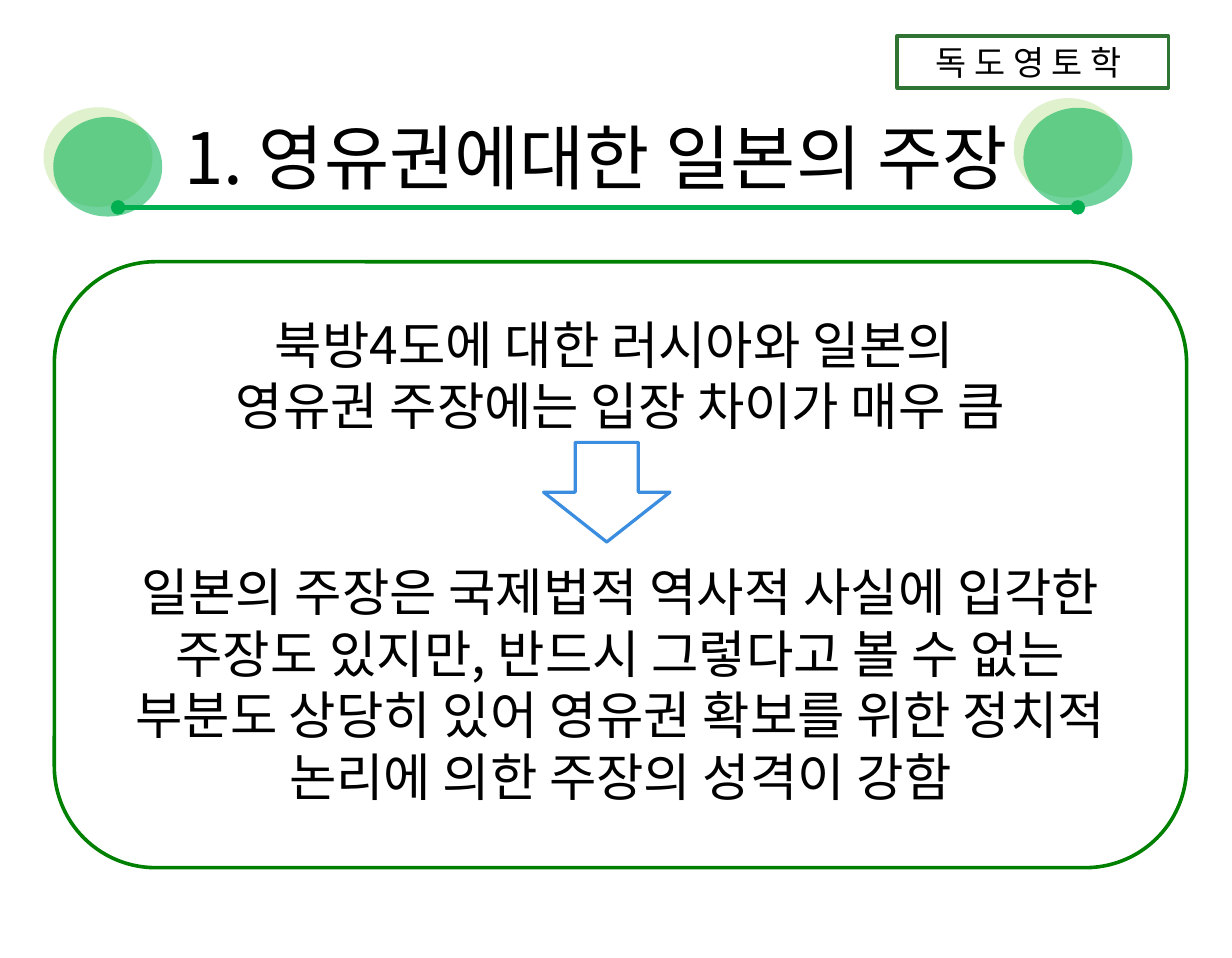
from lxml import etree
from pptx import Presentation
from pptx import util as u
from pptx.dml.color import RGBColor
from pptx.enum import shapes, text
from pptx.oxml import parse_xml
from pptx.oxml.ns import qn

Pt = u.Pt
FONT = "Noto Sans CJK KR"
HUES = {"ink": "000000", "white": "FFFFFF", "green": "00B050", "lime": "92D050",
        "frame": "008000", "label": "307433", "blue": "3B8DDF"}
NS = "http://schemas.openxmlformats.org/drawingml/2006/main"
GLOW = (f'<a:effectLst xmlns:a="{NS}"><a:outerShdw dist="107950" dir="13500000" algn="ctr" rotWithShape="0">'
        f'<a:srgbClr val="{HUES["lime"]}"><a:alpha val="50000"/></a:srgbClr></a:outerShdw></a:effectLst>')

deck = Presentation()
deck.slide_width, deck.slide_height = Pt(765.36), Pt(595.44)
slide = deck.slides.add_slide(deck.slide_layouts[6])
kinds = shapes.MSO_SHAPE


def draw(kind, box, fill=None, line=None, width=0):
    shape = slide.shapes.add_shape(kind, *map(Pt, box))
    shape.shadow.inherit = False
    if fill:
        shape.fill.solid()
        shape.fill.fore_color.rgb = RGBColor.from_string(HUES[fill])
    else:
        shape.fill.background()
    if line:
        shape.line.color.rgb = RGBColor.from_string(HUES[line])
        shape.line.width = Pt(width)
    else:
        shape.line.fill.background()
    return shape


def write(shape, words, size, align):
    frame = shape.text_frame
    frame.text = words
    frame.word_wrap = True
    frame.vertical_anchor = text.MSO_ANCHOR.TOP
    for para in frame.paragraphs:
        para.alignment = align
        para.line_spacing = Pt(1.2 * size)
        for run in para.runs:
            run.font.size = Pt(size)
            run.font.name = FONT
            run.font.color.rgb = RGBColor.from_string(HUES["ink"])


for left, top in ((33.1, 72.7), (635.8, 67)):
    oval = draw(kinds.OVAL, (left, top, 67.7, 61.9), "green")
    color = oval._element.spPr.find(".//" + qn("a:srgbClr"))
    etree.SubElement(color, qn("a:alpha")).set("val", "56000")
    props = oval._element.spPr
    props.replace(props.find(qn("a:effectLst")), parse_xml(GLOW))

rule = slide.shapes.add_connector(shapes.MSO_CONNECTOR.STRAIGHT, Pt(73.4), Pt(128.9), Pt(669.6), Pt(128.9))
rule.line.color.rgb = RGBColor.from_string(HUES["green"])
rule.line.width = Pt(3)
for end in ("a:headEnd", "a:tailEnd"):
    etree.SubElement(rule.line._ln, qn(end)).set("type", "oval")
etree.SubElement(rule._element.spPr, qn("a:effectLst"))

title = slide.shapes.add_textbox(Pt(107.3), Pt(67), Pt(573.8), Pt(60.5))
write(title, "1. 영유권에대한 일본의 주장", 44, text.PP_ALIGN.LEFT)

panel = draw(kinds.ROUNDED_RECTANGLE, (33.8, 162.7, 703.4, 376.6), None, "frame", 2.25)
panel.adjustments[0] = 0.167

label = draw(kinds.RECTANGLE, (557.3, 22.3, 168.5, 32.4), "white", "label", 2)
write(label, "독 도 영 토 학 ", 21, text.PP_ALIGN.CENTER)

body = slide.shapes.add_textbox(Pt(67.7), Pt(190.8), Pt(635.8), Pt(317.5))
write(body, "북방4도에 대한 러시아와 일본의 \n"
      "영유권 주장에는 입장 차이가 매우 큼\n"
      "일본의 주장은 국제법적 역사적 사실에 입각한 주장도 있지만, 반드시 그렇다고 볼 수 없는 "
      "부분도 상당히 있어 영유권 확보를 위한 정치적 논리에 의한 주장의 성격이 강함",
      32, text.PP_ALIGN.CENTER)
body.text_frame.paragraphs[2].space_before = Pt(76.8)

draw(kinds.DOWN_ARROW, (337.7, 275, 78.5, 61.9), "white", "blue", 2)

deck.save("out.pptx")
